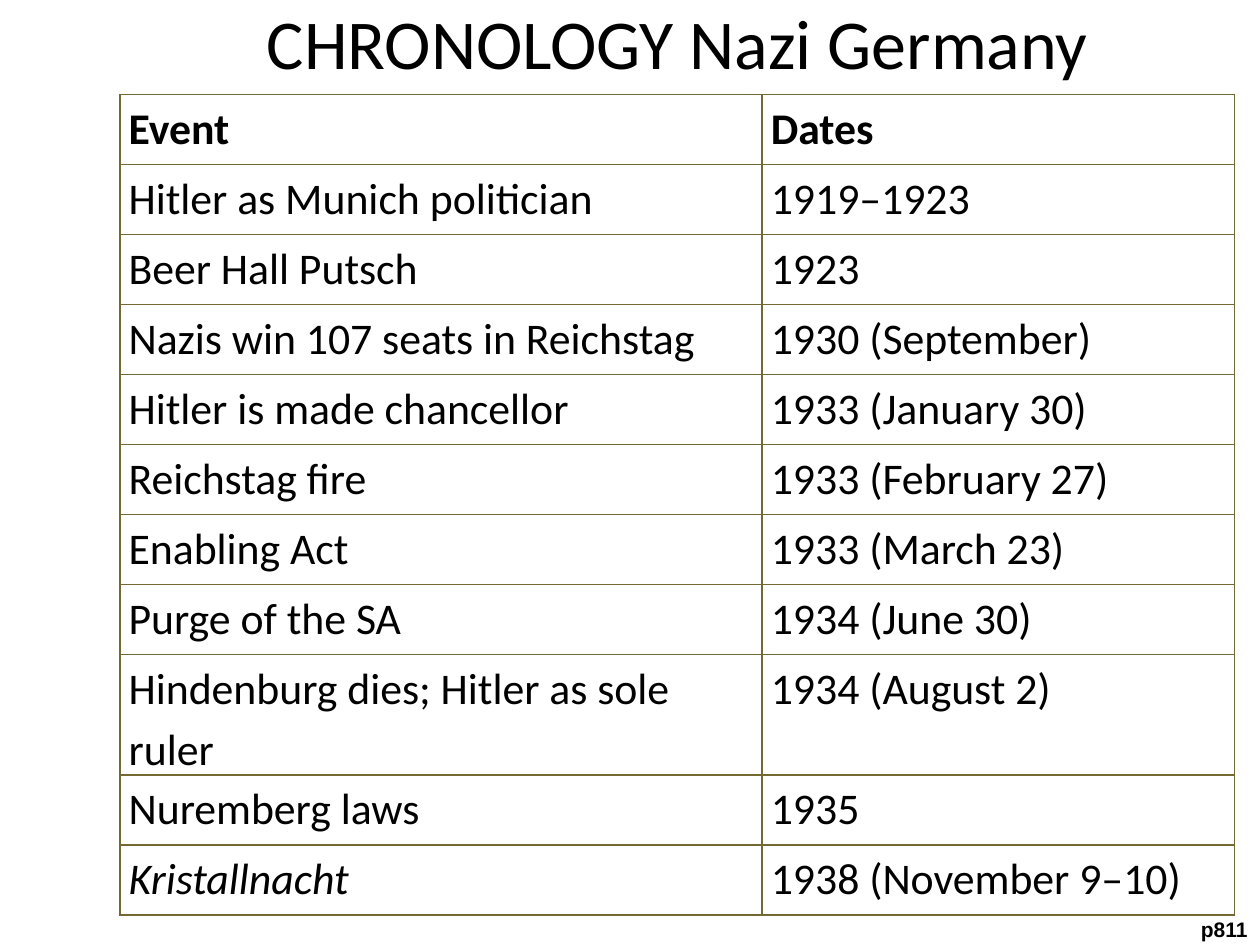
from dataclasses import dataclass

from lxml import etree
from pptx import Presentation
from pptx.dml.color import RGBColor
from pptx.enum.text import MSO_ANCHOR, PP_ALIGN
from pptx.oxml.ns import qn
from pptx.util import Pt

CENTER, RIGHT = PP_ALIGN.CENTER, PP_ALIGN.RIGHT
MIDDLE = MSO_ANCHOR.MIDDLE


@dataclass(frozen=True)
class Theme:
    text: RGBColor = RGBColor(0, 0, 0)
    border: str = "746833"
    body_font: str = "Calibri"
    page_font: str = "Arial"
    title_size: int = 40
    table_size: int = 25
    page_size: int = 12


THEME = Theme()
ROWS = [
    ("Event", "Dates"),
    ("Hitler as Munich politician", "1919–1923"),
    ("Beer Hall Putsch", "1923"),
    ("Nazis win 107 seats in Reichstag", "1930 (September)"),
    ("Hitler is made chancellor", "1933 (January 30)"),
    ("Reichstag fire", "1933 (February 27)"),
    ("Enabling Act", "1933 (March 23)"),
    ("Purge of the SA", "1934 (June 30)"),
    ("Hindenburg dies; Hitler as sole ruler", "1934 (August 2)"),
    ("Nuremberg laws", "1935"),
    ("Kristallnacht", "1938 (November 9–10)"),
]
COLUMN_WIDTHS = (367, 270)
ROW_HEIGHT = 40


def set_font(p, name, size, bold=False, italic=False):
    font = p.font
    font.name, font.size = name, Pt(size)
    font.bold, font.italic = bold, italic
    font.color.rgb = THEME.text


def add_borders(cell):
    tc_pr = cell._tc.get_or_add_tcPr()
    for side in ("lnL", "lnR", "lnT", "lnB"):
        line = etree.SubElement(tc_pr, qn(f"a:{side}"), w=str(Pt(1)))
        fill = etree.SubElement(line, qn("a:solidFill"))
        etree.SubElement(fill, qn("a:srgbClr"), val=THEME.border)


prs = Presentation()
prs.slide_width, prs.slide_height = Pt(720), Pt(540)
s = prs.slides.add_slide(prs.slide_layouts[5])

# Title
title = s.shapes.title
title.left, title.top, title.width, title.height = Pt(54), Pt(6), Pt(666), Pt(36)
tf = title.text_frame
tf.text = "CHRONOLOGY Nazi Germany"
tf.vertical_anchor = MIDDLE
p = tf.paragraphs[0]
p.alignment = CENTER
set_font(p, THEME.body_font, THEME.title_size)

# Page reference
sp = s.shapes.add_textbox(Pt(675), Pt(520), Pt(45), Pt(21.6))
tf = sp.text_frame
tf.word_wrap = False
tf.text = "p811"
p = tf.paragraphs[0]
p.alignment = RIGHT
set_font(p, THEME.page_font, THEME.page_size, bold=True)

# Chronology table
table = s.shapes.add_table(
    len(ROWS), len(COLUMN_WIDTHS), Pt(68.5), Pt(54),
    Pt(sum(COLUMN_WIDTHS)), Pt(ROW_HEIGHT * len(ROWS)),
).table
table.first_row = table.horz_banding = False
for column, width in zip(table.columns, COLUMN_WIDTHS):
    column.width = Pt(width)

for r, texts in enumerate(ROWS):
    table.rows[r].height = Pt(ROW_HEIGHT)
    for c, text in enumerate(texts):
        cell = table.cell(r, c)
        cell.margin_left = cell.margin_right = Pt(5)
        cell.margin_top = cell.margin_bottom = Pt(0)
        add_borders(cell)
        cell.fill.background()
        cell.text = text
        p = cell.text_frame.paragraphs[0]
        p.line_spacing = 1.15
        set_font(p, THEME.body_font, THEME.table_size,
                 bold=r == 0, italic=text == "Kristallnacht")

prs.save("out.pptx")
